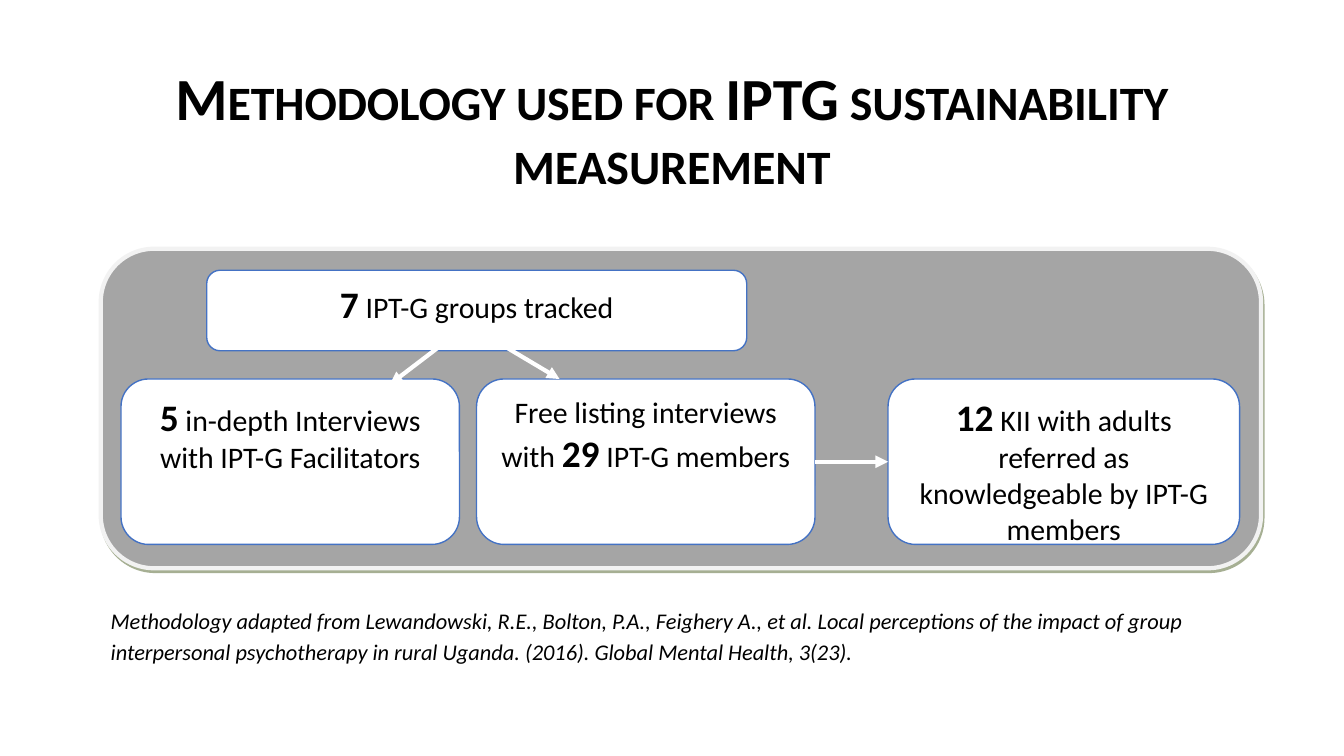
from dataclasses import dataclass

from lxml.etree import SubElement
from pptx import Presentation
from pptx.dml.color import RGBColor
from pptx.enum.shapes import MSO_CONNECTOR as Link, MSO_SHAPE as Preset
from pptx.enum.text import MSO_ANCHOR as Anchor, PP_ALIGN as Align
from pptx.oxml.ns import qn
from pptx.shapes.autoshape import Shape
from pptx.shapes.connector import Connector
from pptx.slide import Slide
from pptx.text.text import TextFrame
from pptx.util import Cm, Pt


@dataclass(frozen=True)
class Theme:
    font: str = "Calibri"
    ink: RGBColor = RGBColor(0, 0, 0)
    white: RGBColor = RGBColor(255, 255, 255)
    panel: RGBColor = RGBColor(0xA5, 0xA5, 0xA5)
    panel_edge: RGBColor = RGBColor(0xF2, 0xF2, 0xF2)
    card_edge: RGBColor = RGBColor(0x44, 0x72, 0xC4)
    shadow: str = "4E6128"
    title_size: float = 42.7
    number_size: float = 26.7
    label_size: float = 21.3
    source_size: float = 16
    thick: float = 3
    thin: float = 1


@dataclass(frozen=True)
class Area:
    left: float
    top: float
    width: float
    height: float


@dataclass(frozen=True)
class Card:
    area: Area
    before: str
    number: str
    after: str


@dataclass(frozen=True)
class Arrow:
    start_x: float
    start_y: float
    end_x: float
    end_y: float


THEME = Theme()
ROW_TOP, ROW_HEIGHT = 9.55, 4.17
ROW_MIDDLE = ROW_TOP + ROW_HEIGHT / 2

TITLE = Area(2.54, 1.22, 28.78, 4.27)
SOURCE = Area(2.54, 15.06, 29.57, 1.78)
PANEL = Area(2.54, 6.27, 29.24, 8.05)
GROUPS = Card(Area(5.21, 6.81, 13.61, 2.03), "", "7", " IPT-G groups tracked")
FACILITATORS = Card(Area(3.05, ROW_TOP, 8.53, ROW_HEIGHT), "", "5",
                    " in-depth Interviews with IPT-G Facilitators")
MEMBERS = Card(Area(12.01, ROW_TOP, 8.53, ROW_HEIGHT),
               "Free listing interviews with ", "29", " IPT-G members")
ADULTS = Card(Area(22.38, ROW_TOP, 8.86, ROW_HEIGHT), "", "12",
              " KII with adults referred as knowledgeable by IPT-G members")
TO_FACILITATORS = Arrow(11.3, 8.56, 9.83, 9.68)
TO_MEMBERS = Arrow(12.52, 8.61, 14.1, 9.55)
TO_ADULTS = Arrow(20.54, ROW_MIDDLE, 22.38, ROW_MIDDLE)


def place(area: Area) -> tuple[Cm, Cm, Cm, Cm]:
    return Cm(area.left), Cm(area.top), Cm(area.width), Cm(area.height)


def set_margins(frame: TextFrame, side: float, end: float) -> None:
    frame.word_wrap = True
    frame.margin_left = frame.margin_right = Cm(side)
    frame.margin_top = frame.margin_bottom = Cm(end)


def add_title(page: Slide) -> None:
    frame = page.shapes.add_textbox(*place(TITLE)).text_frame
    set_margins(frame, 0, 0)
    frame.vertical_anchor = Anchor.MIDDLE
    para = frame.paragraphs[0]
    para.alignment = Align.CENTER
    para.line_spacing = 0.9
    span = para.add_run()
    span.text = "Methodology used for IPTG sustainability measurement"
    span._r.get_or_add_rPr().set("cap", "small")
    para.font.name = THEME.font
    para.font.size = Pt(THEME.title_size)
    para.font.bold = True
    para.font.color.rgb = THEME.ink


def add_source(page: Slide) -> None:
    frame = page.shapes.add_textbox(*place(SOURCE)).text_frame
    set_margins(frame, 0.25, 0.13)
    para = frame.paragraphs[0]
    para.text = (
        "Methodology adapted from Lewandowski, R.E., Bolton, P.A., Feighery A., et al. "
        "Local perceptions of the impact of group interpersonal psychotherapy in rural "
        "Uganda. (2016). Global Mental Health, 3(23)."
    )
    para.line_spacing = 1.15
    para.font.name = THEME.font
    para.font.size = Pt(THEME.source_size)
    para.font.italic = True
    para.font.color.rgb = THEME.ink


def add_rounded(page: Slide, area: Area, fill: RGBColor, edge: RGBColor, weight: float) -> Shape:
    box = page.shapes.add_shape(Preset.ROUNDED_RECTANGLE, *place(area))
    box.shadow.inherit = False
    box.fill.solid()
    box.fill.fore_color.rgb = fill
    box.line.color.rgb = edge
    box.line.width = Pt(weight)
    return box


def add_panel(page: Slide) -> None:
    box = add_rounded(page, PANEL, THEME.panel, THEME.panel_edge, THEME.thick)
    effects = box._element.spPr.find(qn("a:effectLst"))
    shadow = SubElement(effects, qn("a:outerShdw"), blurRad="0", dist=str(Pt(2.2)),
                        dir=str(63 * 60000), algn="ctr", rotWithShape="0")
    color = SubElement(shadow, qn("a:srgbClr"), val=THEME.shadow)
    SubElement(color, qn("a:alpha"), val="49000")


def add_card(page: Slide, card: Card) -> Shape:
    box = add_rounded(page, card.area, THEME.white, THEME.card_edge, THEME.thin)
    frame = box.text_frame
    set_margins(frame, 0.33, 0.18)
    frame.vertical_anchor = Anchor.TOP
    para = frame.paragraphs[0]
    para.alignment = Align.CENTER
    para.font.name = THEME.font
    para.font.color.rgb = THEME.ink
    for text in filter(None, (card.before, card.number, card.after)):
        span = para.add_run()
        span.text = text
        is_number = text == card.number
        span.font.bold = is_number
        span.font.size = Pt(THEME.number_size if is_number else THEME.label_size)
    return box


def add_arrow(page: Slide, arrow: Arrow) -> Connector:
    line = page.shapes.add_connector(Link.STRAIGHT, Cm(arrow.start_x), Cm(arrow.start_y),
                                     Cm(arrow.end_x), Cm(arrow.end_y))
    line.line.color.rgb = THEME.white
    line.line.width = Pt(THEME.thick)
    SubElement(line.line._get_or_add_ln(), qn("a:tailEnd"), type="triangle")
    SubElement(line._element.spPr, qn("a:effectLst"))
    return line


def main() -> None:
    deck = Presentation()
    deck.slide_width, deck.slide_height = Cm(33.87), Cm(19.05)
    page = deck.slides.add_slide(deck.slide_layouts[6])
    add_title(page)
    add_source(page)
    add_panel(page)
    members = add_card(page, MEMBERS)
    adults = add_card(page, ADULTS)
    add_card(page, FACILITATORS)
    across = add_arrow(page, TO_ADULTS)
    across.begin_connect(members, 3)
    across.end_connect(adults, 1)
    add_card(page, GROUPS)
    for arrow in (TO_FACILITATORS, TO_MEMBERS):
        add_arrow(page, arrow)
    deck.save("out.pptx")


if __name__ == "__main__":
    main()
